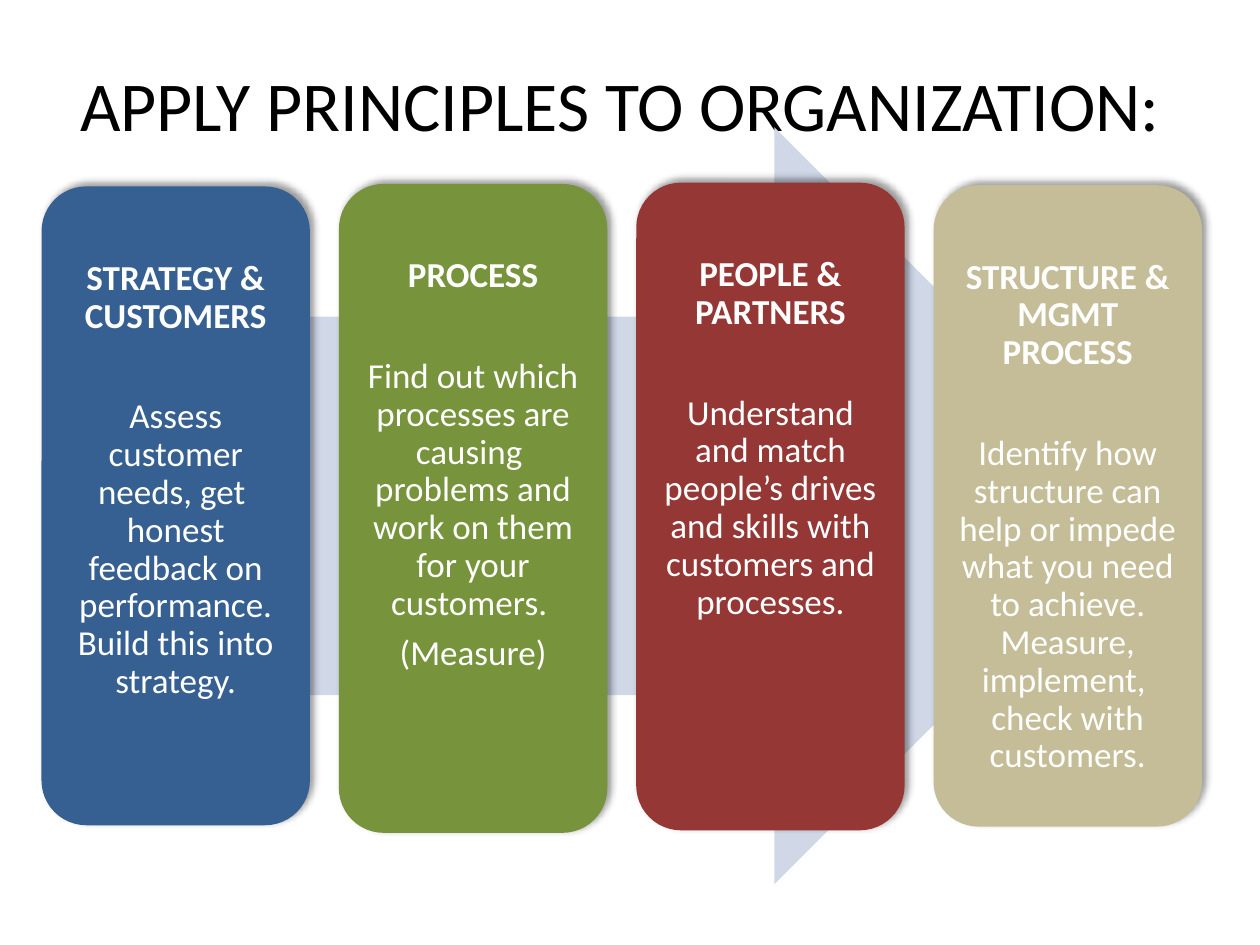
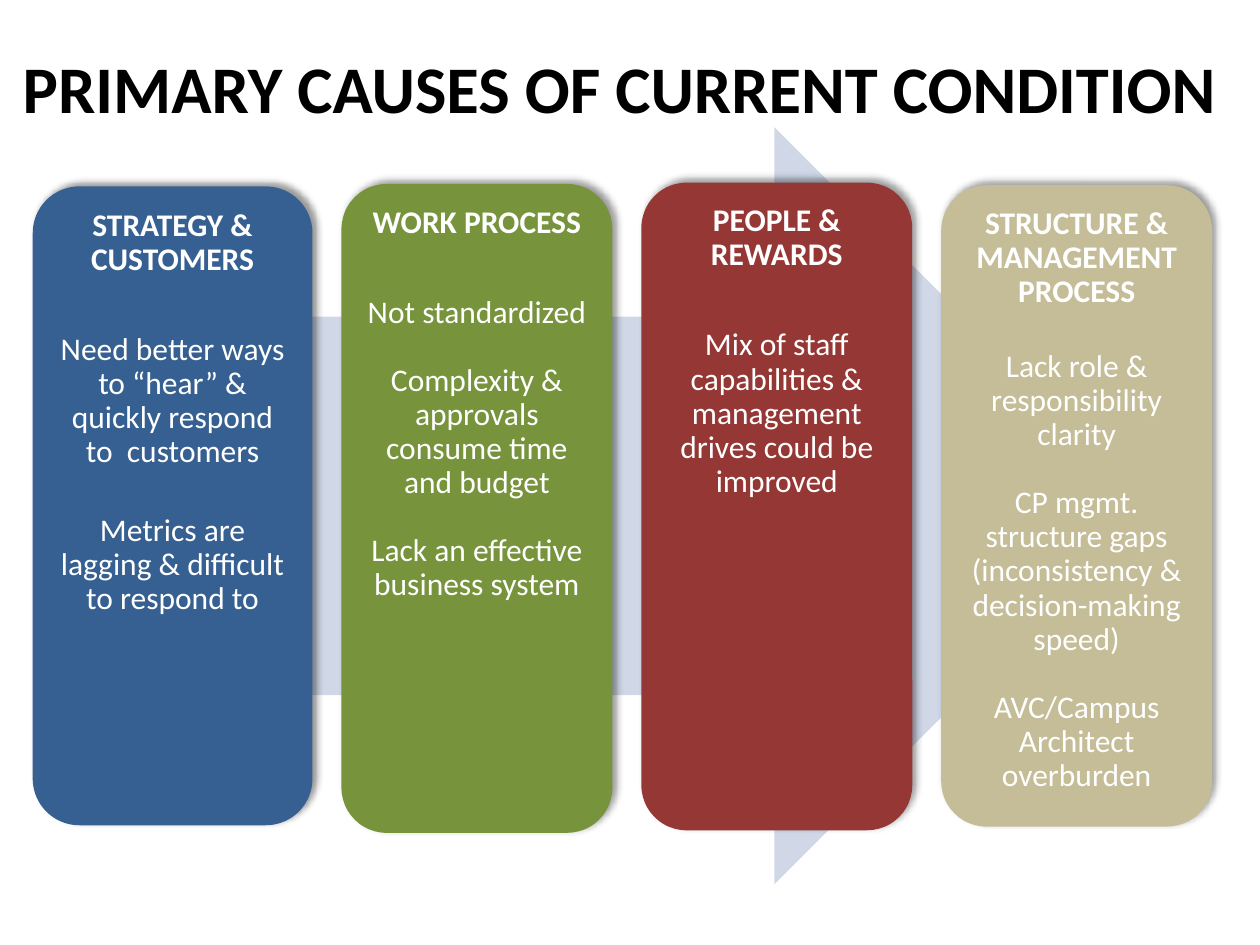
from lxml import etree
from pptx import Presentation
from pptx.dml.color import RGBColor
from pptx.enum.shapes import MSO_SHAPE
from pptx.enum.text import MSO_ANCHOR, MSO_AUTO_SIZE, PP_ALIGN
from pptx.oxml.ns import qn
from pptx.util import Inches, Pt

ARROW, CARD = MSO_SHAPE.RIGHT_ARROW, MSO_SHAPE.ROUNDED_RECTANGLE
TOP, MIDDLE = MSO_ANCHOR.TOP, MSO_ANCHOR.MIDDLE
LEFT, CENTER = PP_ALIGN.LEFT, PP_ALIGN.CENTER

BLACK = RGBColor(0x00, 0x00, 0x00)
WHITE = RGBColor(0xFF, 0xFF, 0xFF)
PALE = RGBColor(0xD0, 0xD8, 0xE8)
BLUE = RGBColor(0x37, 0x60, 0x92)
GREEN = RGBColor(0x77, 0x93, 0x3C)
RED = RGBColor(0x95, 0x37, 0x35)
TAN = RGBColor(0xC4, 0xBD, 0x97)
FONT = "Calibri"

# Each column has its own colour, top and height on both slides
COLUMNS = [(BLUE, 1.48, 5.07), (GREEN, 1.46, 5.15),
           (RED, 1.45, 5.14), (TAN, 1.47, 5.09)]

# Cards: heading, gap below it, body paragraphs, gap between them (points)
SLIDES = [
    dict(title="APPLY PRINCIPLES TO ORGANIZATION:",
         box=(0.26, 0.32, 9.32, 1.01),
         look=dict(size=40, align=CENTER, anchor=MIDDLE),
         left=0.33, step=2.36, width=2.13, extra=0,
         size=20, inset=0.08, lead=0.4,
         cards=[
             ("STRATEGY & CUSTOMERS", 36,
              ["Assess customer needs, get  honest feedback on performance. "
               "Build this into strategy."], 7),
             ("PROCESS", 36,
              ["Find out which processes are causing  problems and work on "
               "them for your customers. ", "(Measure)"], 7),
             ("PEOPLE & PARTNERS", 36,
              ["Understand and match people’s drives and skills with "
               "customers and processes."], 7),
             ("STRUCTURE & MGMT PROCESS", 36,
              ["Identify how structure can help or impede what you need to "
               "achieve. Measure, implement,  check with customers."], 7),
         ]),
    dict(title="PRIMARY CAUSES OF CURRENT CONDITION",
         box=(0.08, 0.32, 9.84, 0.62),
         look=dict(size=38, align=LEFT, anchor=TOP, bold=True),
         left=0.33, step=2.38, width=2.15, extra=0.07,
         size=18, inset=0.07, lead=0,
         cards=[
             ("STRATEGY & CUSTOMERS", 32,
              ["Need better ways to “hear” & quickly respond to  customers",
               "Metrics are lagging & difficult to respond to"], 26),
             ("WORK PROCESS", 32,
              ["Not standardized",
               "Complexity & approvals consume time and budget",
               "Lack an effective business system"], 19.5),
             ("PEOPLE & REWARDS", 32,
              ["Mix of staff capabilities & management drives could be "
               "improved"], 19.5),
             ("STRUCTURE & MANAGEMENT PROCESS", 23.5,
              ["Lack role & responsibility clarity",
               "CP mgmt. structure gaps (inconsistency & decision-making "
               "speed)",
               "AVC/Campus Architect overburden"], 19.5),
         ]),
]


def write(frame, words, size, color=WHITE, bold=False, align=CENTER,
          anchor=TOP, line=1.0, after=0, more=False):
    """Write one paragraph; more=True adds it below the others."""
    frame.word_wrap = True
    frame.auto_size = MSO_AUTO_SIZE.NONE
    frame.vertical_anchor = anchor
    para = frame.add_paragraph() if more else frame.paragraphs[0]
    para.alignment, para.line_spacing = align, line
    para.space_before, para.space_after = Pt(0), Pt(after)
    run = para.add_run()
    run.text = words
    font = run.font
    font.name, font.size, font.bold = FONT, Pt(size), bold
    font.color.rgb = color


def draw(slide, kind, box, fill, shade=False):
    """Add a borderless shape, with a soft shadow if asked."""
    shape = slide.shapes.add_shape(kind, *map(Inches, box))
    shape.fill.solid()
    shape.fill.fore_color.rgb = fill
    shape.line.fill.background()
    shape.shadow.inherit = False
    if shade:
        effects = shape._element.spPr.find(qn("a:effectLst"))
        outer = etree.SubElement(effects, qn("a:outerShdw"), blurRad=str(Pt(4)),
                                 dist=str(Pt(3)), dir=str(315 * 60000),
                                 algn="bl", rotWithShape="0")
        tint = etree.SubElement(outer, qn("a:srgbClr"), val=str(BLACK))
        etree.SubElement(tint, qn("a:alpha"), val="40000")
    return shape


deck = Presentation()
deck.slide_width, deck.slide_height = Inches(10), Inches(7.5)

for page in SLIDES:
    slide = deck.slides.add_slide(deck.slide_layouts[5])

    # Title
    title = slide.shapes.title
    title.left, title.top, title.width, title.height = map(Inches, page["box"])
    write(title.text_frame, page["title"], color=BLACK, **page["look"])

    # Arrow behind the cards
    draw(slide, ARROW, (0.74, 1.01, 8.41, 6.01), PALE)

    # Cards; the first may reach a little further left
    for col, (fill, top, height) in enumerate(COLUMNS):
        head, gap, body, space = page["cards"][col]
        extra = 0 if col else page["extra"]
        left = page["left"] + col * page["step"] - extra
        card = draw(slide, CARD, (left, top, page["width"] + extra, height),
                    fill, shade=True)
        frame = card.text_frame
        inset = Inches(page["inset"])
        frame.margin_left = frame.margin_right = frame.margin_bottom = inset
        frame.margin_top = inset + Inches(page["lead"])
        write(frame, head, page["size"], bold=True, line=0.9, after=gap)
        for words in body:
            write(frame, words, page["size"], line=0.9, after=space, more=True)

deck.save("out.pptx")
